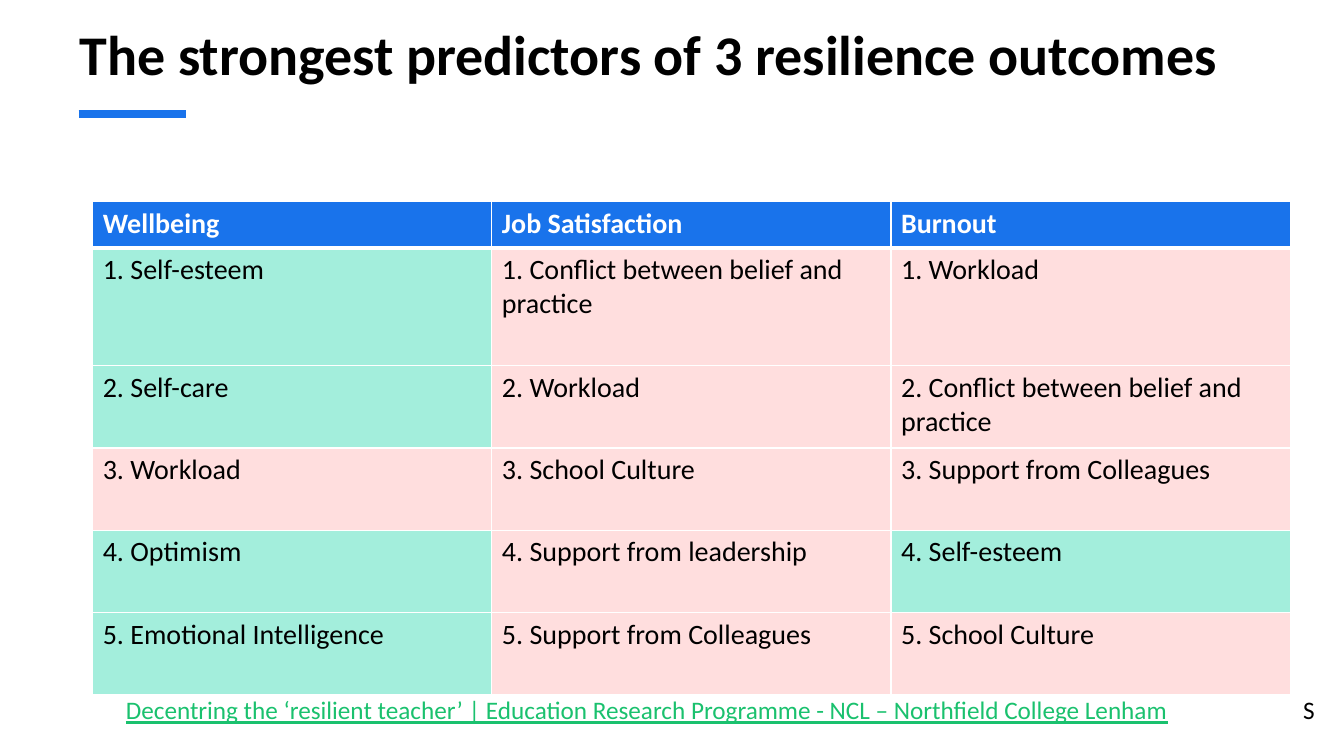
from lxml.etree import SubElement
from pptx import Presentation
from pptx.dml.color import RGBColor
from pptx.enum.shapes import MSO_CONNECTOR
from pptx.enum.text import MSO_ANCHOR, MSO_AUTO_SIZE, PP_ALIGN
from pptx.oxml import parse_xml
from pptx.oxml.ns import nsdecls, qn
from pptx.util import Inches, Pt

BLUE = RGBColor(0x19, 0x73, 0xEB)
GREEN = RGBColor(0x1A, 0xC1, 0x6E)
MINT = RGBColor(0xA3, 0xEE, 0xDC)
ROSE = RGBColor(0xFF, 0xDE, 0xDE)
BLACK = RGBColor(0, 0, 0)
WHITE = RGBColor(0xFF, 0xFF, 0xFF)

GRID_COLUMNS, GRID_ROWS = 40, 30
PERSONAL_FACTORS = {"Self-esteem", "Self-care", "Optimism", "Emotional Intelligence"}
PREDICTORS = {
    "Wellbeing": ["Self-esteem", "Self-care", "Workload", "Optimism",
                  "Emotional Intelligence"],
    "Job Satisfaction": ["Conflict between belief and practice", "Workload",
                         "School Culture", "Support from leadership",
                         "Support from Colleagues"],
    "Burnout": ["Workload", "Conflict between belief and practice",
                "Support from Colleagues", "Self-esteem", "School Culture"],
}
OUTCOME_WIDTH = 11.88
RANK_HEIGHTS = [1.84, 4.68] + [3.26] * 4


class GridSlide:
    """Hold the style and the current slide, and place elements on its grid."""

    def __init__(self, deck):
        self.column = deck.slide_width / GRID_COLUMNS
        self.row = deck.slide_height / GRID_ROWS
        self.slide = deck.slides.add_slide(deck.slide_layouts[5])
        self.font = {"name": "Calibri", "bold": False}

    def across(self, columns):
        return round(columns * self.column)

    def down(self, rows):
        return round(rows * self.row)

    def box(self, left, top, width, height):
        return self.across(left), self.down(top), self.across(width), self.down(height)

    def wording(self, frame, text, color, size, **changes):
        paragraph = frame.paragraphs[0]
        paragraph.alignment = PP_ALIGN.LEFT
        run = paragraph.add_run()
        run.text = text
        run.font.color.rgb = color
        for key, value in {**self.font, "size": Pt(size), **changes}.items():
            setattr(run.font, key, value)

    def title(self, text, *place):
        heading = self.slide.shapes.title
        for key, value in zip(("left", "top", "width", "height"), self.box(*place)):
            setattr(heading, key, value)
        settings = {"word_wrap": True, "auto_size": MSO_AUTO_SIZE.NONE,
                    "vertical_anchor": MSO_ANCHOR.MIDDLE}
        for key, value in settings.items():
            setattr(heading.text_frame, key, value)
        self.wording(heading.text_frame, text, BLACK, 40, bold=True)

    def rule(self, start, end, height):
        accent = self.slide.shapes.add_connector(
            MSO_CONNECTOR.STRAIGHT, self.across(start), self.down(height),
            self.across(end), self.down(height))
        accent.line.color.rgb = BLUE
        accent.line.width = Pt(6)
        SubElement(accent._element.spPr, qn("a:effectLst"))

    def note(self, text, color, *place, **changes):
        caption = self.slide.shapes.add_textbox(*self.box(*place)).text_frame
        caption.word_wrap = True
        self.wording(caption, text, color, 18, **changes)

    def cell(self, cell, text, color, fill, bold=False, bottom=1):
        self.wording(cell.text_frame, text, color, 20, bold=bold)
        cell.fill.solid()
        cell.fill.fore_color.rgb = fill
        borders = {"lnL": 1, "lnR": 1, "lnT": 1, "lnB": bottom}
        for position, (side, points) in enumerate(borders.items()):
            cell._tc.get_or_add_tcPr().insert(position, parse_xml(
                f'<a:{side} {nsdecls("a")} w="{Pt(points)}"><a:solidFill>'
                f'<a:srgbClr val="{WHITE}"/></a:solidFill></a:{side}>'))

    def ranking(self, predictors, left, top):
        place = self.box(left, top, OUTCOME_WIDTH * len(predictors), sum(RANK_HEIGHTS))
        table = self.slide.shapes.add_table(
            len(RANK_HEIGHTS), len(predictors), *place).table
        for row, height in zip(table.rows, RANK_HEIGHTS):
            row.height = self.down(height)
        for index, (outcome, factors) in enumerate(predictors.items()):
            table.columns[index].width = self.across(OUTCOME_WIDTH)
            self.cell(table.cell(0, index), outcome, WHITE, BLUE, bold=True, bottom=3)
            for rank, factor in enumerate(factors, 1):
                fill = MINT if factor in PERSONAL_FACTORS else ROSE
                self.cell(table.cell(rank, index), f"{rank}. {factor}", BLACK, fill)


def main():
    deck = Presentation()
    deck.slide_width, deck.slide_height = Inches(13.33), Inches(7.5)
    page = GridSlide(deck)
    page.rule(2.34, 5.55, 4.52)
    page.title("The strongest predictors of 3 resilience outcomes", 2.07, 0.32, 37.71, 3.56)
    page.ranking(PREDICTORS, 2.76, 8)
    page.note("S", BLACK, 38.49, 27.36, 1.86, 1.6)
    page.note("Decentring the ‘resilient teacher’ | Education Research Programme"
              " - NCL – Northfield College Lenham",
              GREEN, 3.45, 27.36, 36.54, 1.6, underline=True)
    deck.save("out.pptx")


if __name__ == "__main__":
    main()
